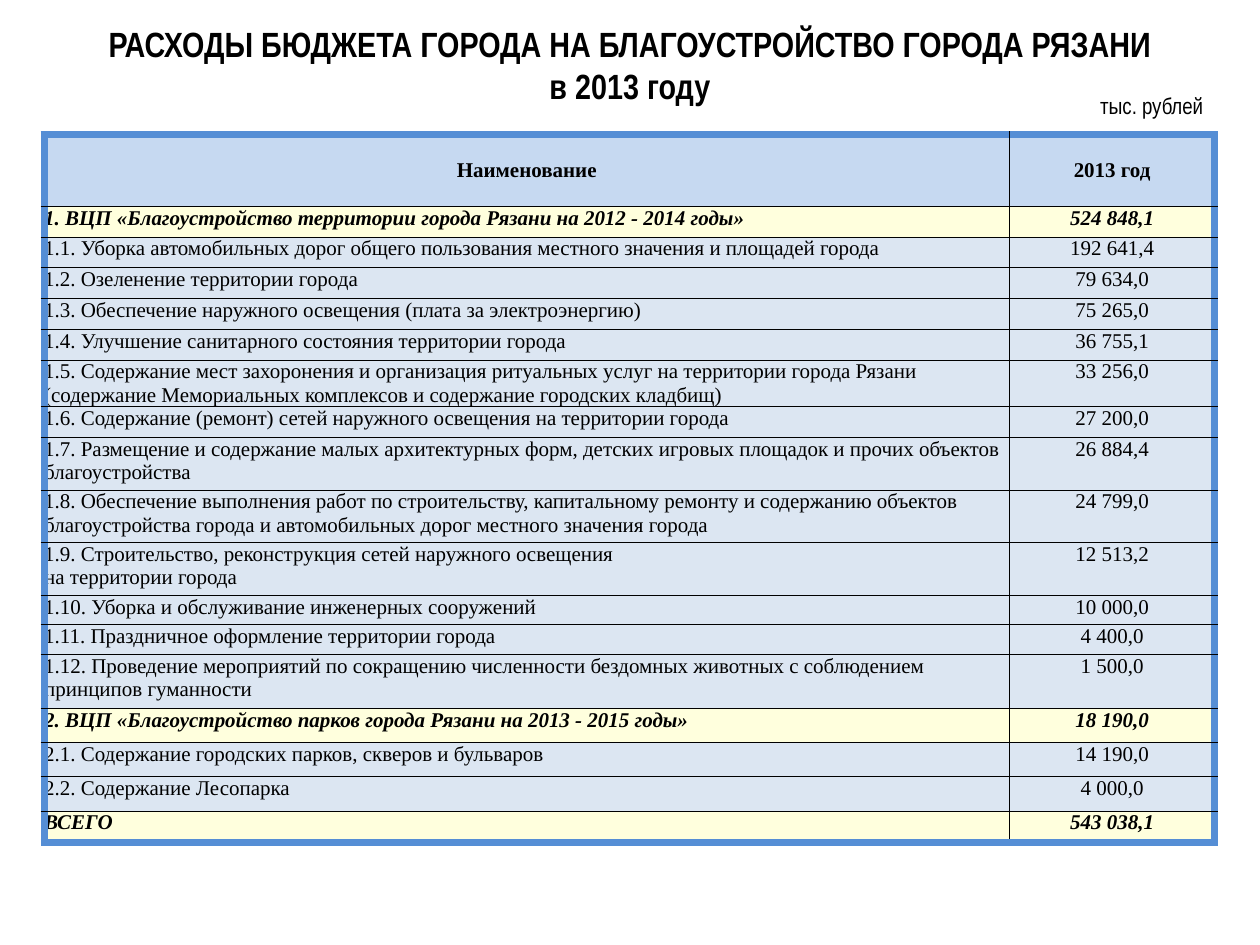
import pptx
import pptx.dml.color
import pptx.enum.text
import pptx.oxml.ns
import pptx.util
from lxml import etree

Cm, Pt = pptx.util.Cm, pptx.util.Pt
RGBColor = pptx.dml.color.RGBColor
ALIGN = pptx.enum.text.PP_ALIGN
ANCHOR = pptx.enum.text.MSO_ANCHOR

BLACK = RGBColor(0x00, 0x00, 0x00)
FRAME_BLUE = RGBColor(0x55, 0x8E, 0xD5)
HEADER_BLUE = RGBColor(0xC6, 0xD9, 0xF1)
ROW_BLUE = RGBColor(0xDC, 0xE6, 0xF2)
TOTAL_YELLOW = RGBColor(0xFF, 0xFF, 0xDD)

# Content
TITLE = ["РАСХОДЫ БЮДЖЕТА ГОРОДА НА БЛАГОУСТРОЙСТВО ГОРОДА РЯЗАНИ", "в 2013 году"]
UNIT = ["тыс. рублей"]

# Row kind: fill, bold, italic
STYLES = {
    "header": (HEADER_BLUE, True, False),
    "total": (TOTAL_YELLOW, True, True),
    "item": (ROW_BLUE, False, False),
}

# Kind, height in cm, name, amount
ROWS = [
    ("header", 1.44, "Наименование", "2013 год"),
    ("total", 0.62, "1. ВЦП «Благоустройство территории города Рязани на 2012 - 2014 годы»", "524 848,1"),
    ("item", 0.62, "1.1. Уборка автомобильных дорог общего пользования местного значения и площадей города", "192 641,4"),
    ("item", 0.62, "1.2. Озеленение территории города", "79 634,0"),
    ("item", 0.62, "1.3. Обеспечение наружного освещения (плата за электроэнергию)", "75 265,0"),
    ("item", 0.62, "1.4. Улучшение санитарного состояния территории города", "36 755,1"),
    ("item", 0.62, "1.5. Содержание мест захоронения и организация ритуальных услуг на территории города Рязани "
                   "(содержание Мемориальных комплексов и содержание городских кладбищ)", "33 256,0"),
    ("item", 0.62, "1.6. Содержание (ремонт) сетей наружного освещения на территории города", "27 200,0"),
    ("item", 1.06, "1.7. Размещение и содержание малых архитектурных форм, детских игровых площадок "
                   "и прочих объектов благоустройства", "26 884,4"),
    ("item", 1.06, "1.8. Обеспечение выполнения работ по строительству, капитальному ремонту и содержанию объектов "
                   "благоустройства города и автомобильных дорог местного значения города", "24 799,0"),
    ("item", 1.06, "1.9. Строительство, реконструкция сетей наружного освещения\nна территории города", "12 513,2"),
    ("item", 0.59, "1.10. Уборка и обслуживание инженерных сооружений", "10 000,0"),
    ("item", 0.6, "1.11. Праздничное оформление территории города", "4 400,0"),
    ("item", 1.09, "1.12. Проведение мероприятий по сокращению численности бездомных животных с соблюдением "
                   "принципов гуманности", "1 500,0"),
    ("total", 0.69, "2. ВЦП «Благоустройство парков города Рязани на 2013 - 2015 годы»", "18 190,0"),
    ("item", 0.69, "2.1. Содержание городских парков, скверов и бульваров", "14 190,0"),
    ("item", 0.69, "2.2. Содержание Лесопарка", "4 000,0"),
    ("total", 0.63, "ВСЕГО", "543 038,1"),
]
COLUMN_WIDTHS = [19.46, 4.14]
TABLE_LEFT, TABLE_TOP = 0.89, 2.72


def set_font(paragraph, name, size, bold=False, italic=False):
    font = paragraph.font
    font.name, font.size = name, Pt(size)
    font.bold, font.italic = bold, italic
    font.color.rgb = BLACK


def add_label(page, place, lines, size, align, anchor, bold=False):
    frame = page.shapes.add_textbox(*map(Cm, place)).text_frame
    frame.word_wrap = True
    frame.vertical_anchor = anchor
    frame.text = "\n".join(lines)
    for paragraph in frame.paragraphs:
        paragraph.alignment = align
        set_font(paragraph, "Arial Narrow", size, bold)


def set_border(cell, side, color, width):
    properties = cell._tc.get_or_add_tcPr()
    line = etree.SubElement(properties, pptx.oxml.ns.qn(f"a:ln{side}"), w=str(Pt(width)))
    fill = etree.SubElement(line, pptx.oxml.ns.qn("a:solidFill"))
    etree.SubElement(fill, pptx.oxml.ns.qn("a:srgbClr"), val=str(color))


def fill_cell(cell, text, kind, align, outer_sides):
    for side in "LRTB":
        color, width = (FRAME_BLUE, 4.5) if side in outer_sides else (BLACK, 0.5)
        set_border(cell, side, color, width)
    color, bold, italic = STYLES[kind]
    cell.fill.solid()
    cell.fill.fore_color.rgb = color
    cell.margin_left = cell.margin_right = cell.margin_top = cell.margin_bottom = 0
    cell.vertical_anchor = ANCHOR.MIDDLE if kind == "header" else ANCHOR.TOP
    cell.text = text
    for paragraph in cell.text_frame.paragraphs:
        paragraph.alignment = align
        set_font(paragraph, "Times New Roman", 12, bold, italic)


def add_budget_table(page):
    size = sum(COLUMN_WIDTHS), sum(row[1] for row in ROWS)
    frame = page.shapes.add_table(len(ROWS), len(COLUMN_WIDTHS), *map(Cm, (TABLE_LEFT, TABLE_TOP, *size)))
    table = frame.table
    table.first_row = table.horz_banding = False
    for column, width in zip(table.columns, COLUMN_WIDTHS):
        column.width = Cm(width)
    for index, (kind, height, *texts) in enumerate(ROWS):
        table.rows[index].height = Cm(height)
        outer_row = {0: "T", len(ROWS) - 1: "B"}.get(index, "")
        for number, text in enumerate(texts):
            align = ALIGN.LEFT if number == 0 and kind != "header" else ALIGN.CENTER
            fill_cell(table.cell(index, number), text, kind, align, outer_row + "LR"[number])


def main():
    deck = pptx.Presentation()
    deck.slide_width, deck.slide_height = Cm(25.4), Cm(19.05)
    page = deck.slides.add_slide(deck.slide_layouts[6])
    add_budget_table(page)
    add_label(page, (0.5, 0.33, 24.4, 1.73), TITLE, 20, ALIGN.CENTER, ANCHOR.TOP, bold=True)
    add_label(page, (19.9, 1.52, 4.6, 1.2), UNIT, 13, ALIGN.RIGHT, ANCHOR.MIDDLE)
    deck.save("out.pptx")


if __name__ == "__main__":
    main()
